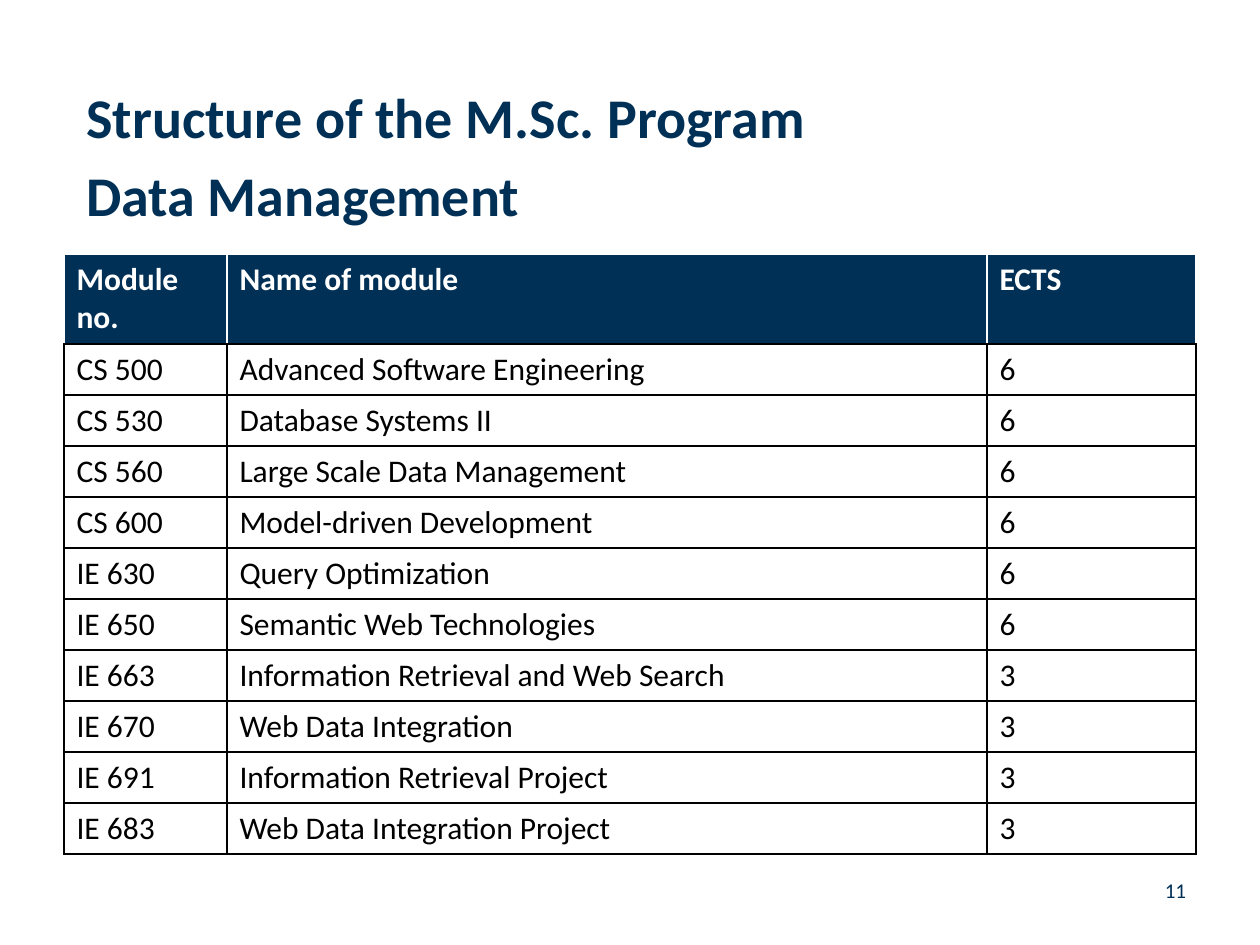
from lxml import etree
from pptx import Presentation, util as u
from pptx.dml.color import RGBColor
from pptx.enum import text
from pptx.oxml.ns import qn

COLORS = {"navy": "003056", "white": "FFFFFF", "black": "000000"}
FONT = "Calibri"
TITLE = ["Structure of the M.Sc. Program", "Data Management"]
PAGE_NUMBER = "11"
HEADER = ("Module no.", "Name of module", "ECTS")
MODULES = [
    ("CS 500", "Advanced Software Engineering", 6),
    ("CS 530", "Database Systems II", 6),
    ("CS 560", "Large Scale Data Management", 6),
    ("CS 600", "Model-driven Development", 6),
    ("IE 630", "Query Optimization", 6),
    ("IE 650", "Semantic Web Technologies", 6),
    ("IE 663", "Information Retrieval and Web Search", 3),
    ("IE 670", "Web Data Integration", 3),
    ("IE 691", "Information Retrieval Project", 3),
    ("IE 683", "Web Data Integration Project", 3),
]
COLUMN_WIDTHS = (163, 760, 209)
HEADER_HEIGHT, ROW_HEIGHT = 90, 51


def px(count):
    return u.Emu(round(count * 914400 / 126))


def set_font(para, size, color, bold=False):
    font = para.font
    font.name, font.size, font.bold = FONT, u.Pt(size), bold
    font.color.rgb = RGBColor.from_string(COLORS[color])


def add_text(page, area, lines, size, bold=False):
    frame = page.shapes.add_textbox(*map(px, area)).text_frame
    frame.word_wrap = True
    frame.text = "\n".join(lines)
    for para in frame.paragraphs:
        set_font(para, size, "navy", bold)
    return frame


def set_borders(cell, **sides):
    """Draw 1 pt borders; sides maps lnL, lnR, lnT, lnB to colour names."""
    properties = cell._tc.get_or_add_tcPr()
    for index, side in enumerate(("lnL", "lnR", "lnT", "lnB")):
        line = etree.Element(qn(f"a:{side}"), w=str(u.Pt(1)))
        fill = etree.SubElement(line, qn("a:solidFill"))
        etree.SubElement(fill, qn("a:srgbClr"), val=COLORS[sides[side]])
        properties.insert(index, line)


def add_module_table(page):
    rows = [HEADER, *MODULES]
    heights = [HEADER_HEIGHT] + [ROW_HEIGHT] * len(MODULES)
    area = (64, 254, sum(COLUMN_WIDTHS), sum(heights))
    table = page.shapes.add_table(len(rows), len(HEADER), *map(px, area)).table
    for column, width in zip(table.columns, COLUMN_WIDTHS):
        column.width = px(width)
    for r, (values, height) in enumerate(zip(rows, heights)):
        is_header = r == 0
        edge = "white" if is_header else "black"
        table.rows[r].height = px(height)
        for c, value in enumerate(values):
            cell = table.cell(r, c)
            cell.text = str(value)
            set_font(cell.text_frame.paragraphs[0], 18, edge, is_header)
            cell.fill.solid()
            cell.fill.fore_color.rgb = RGBColor.from_string(
                COLORS["navy" if is_header else "white"])
            set_borders(cell, lnL=edge, lnR=edge,
                        lnT="white" if is_header else "black", lnB="black")


def main():
    deck = Presentation()
    deck.slide_width, deck.slide_height = px(1260), px(945)
    page = deck.slides.add_slide(deck.slide_layouts[6])

    number = add_text(page, (1041, 878, 145, 25), [PAGE_NUMBER], 12)
    number.margin_left = number.margin_right = 0
    number.margin_top = number.margin_bottom = 0
    number.paragraphs[0].alignment = text.PP_ALIGN.RIGHT

    title = add_text(page, (74, 76, 942, 160), TITLE, 32, bold=True)
    title.paragraphs[1].space_before = u.Pt(6.4)

    add_module_table(page)
    deck.save("out.pptx")


if __name__ == "__main__":
    main()
